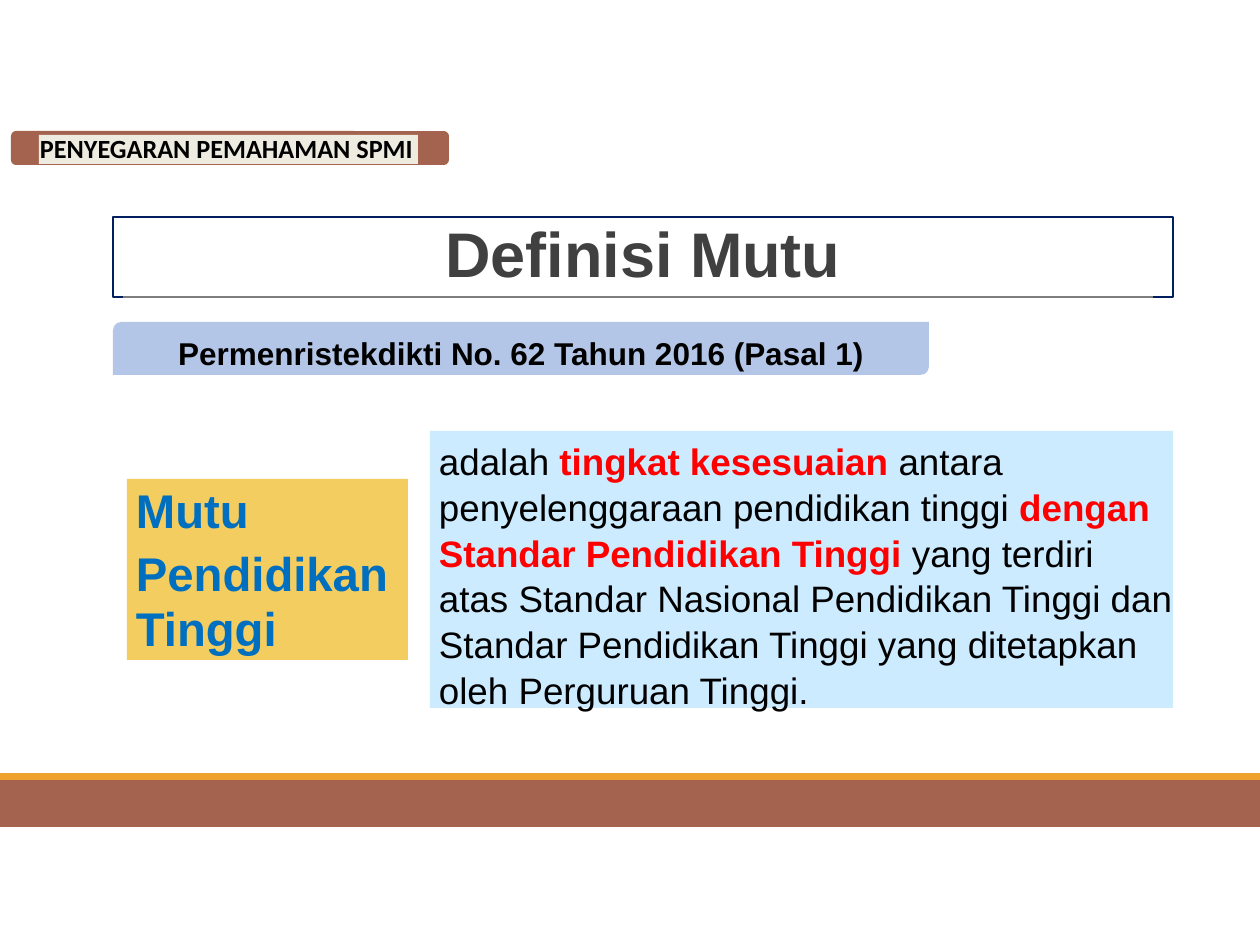
import dataclasses

import pptx
import pptx.dml.color
import pptx.enum.shapes
import pptx.enum.text
import pptx.oxml
import pptx.oxml.ns
import pptx.util

SHAPE = pptx.enum.shapes.MSO_SHAPE
ALIGN = pptx.enum.text.PP_ALIGN
WIDE, HIGH = 1260, 945
SCALE = 914400 / 126


@dataclasses.dataclass(frozen=True)
class Theme:
    brown: str = "A4634E"
    orange: str = "EFA12D"
    gray: str = "7E7E7E"
    navy: str = "001F5F"
    band: str = "B4C6E7"
    gold: str = "F3CD5F"
    sky: str = "CCEBFF"
    cream: str = "EEECE1"
    black: str = "000000"
    dark: str = "404040"
    blue: str = "006FC0"
    red: str = "FF0000"
    font: str = "Arial"
    tag_font: str = "Calibri"
    title_size: int = 36
    term_size: int = 27
    body_size: int = 21
    law_size: int = 18
    tag_size: int = 15


THEME = Theme()


def px(num):
    return pptx.util.Emu(round(num * SCALE))


def rgb(code):
    return pptx.dml.color.RGBColor.from_string(code)


def style(run, size, color, bold=True, font=THEME.font):
    run.font.name = font
    run.font.size = pptx.util.Pt(size)
    run.font.bold = bold
    run.font.color.rgb = rgb(color)


def frame(shape, left=0, top=0):
    """Prepare a top-anchored text frame with the given insets."""
    text = shape.text_frame
    text.word_wrap = True
    text.auto_size = pptx.enum.text.MSO_AUTO_SIZE.NONE
    text.vertical_anchor = pptx.enum.text.MSO_ANCHOR.TOP
    text.margin_left, text.margin_top = px(left), px(top)
    text.margin_right = text.margin_bottom = 0
    return text


def write(text, words, size, color, align=ALIGN.LEFT, space=1.0, font=THEME.font):
    text.text = words
    for para in text.paragraphs:
        para.alignment = align
        para.line_spacing = space
        for run in para.runs:
            style(run, size, color, font=font)


def block(slide, box, fill, kind=SHAPE.RECTANGLE, round_by=None):
    shape = slide.shapes.add_shape(kind, *map(px, box))
    shape.shadow.inherit = False
    shape.fill.solid()
    shape.fill.fore_color.rgb = rgb(fill)
    shape.line.fill.background()
    if round_by is not None:
        shape.adjustments[0] = round_by
    return shape


def rule(slide, left, right, y):
    line = slide.shapes.add_connector(
        pptx.enum.shapes.MSO_CONNECTOR.STRAIGHT, px(left), px(y), px(right), px(y))
    line.line.color.rgb = rgb(THEME.gray)
    line.line.width = pptx.util.Pt(0.6)
    props = line._element.spPr
    props.append(pptx.oxml.parse_xml(
        f'<a:effectLst {pptx.oxml.ns.nsdecls("a")}/>'))


def title(slide, box):
    shape = slide.shapes.title
    shape.left, shape.top, shape.width, shape.height = map(px, box)
    shape.line.color.rgb = rgb(THEME.navy)
    shape.line.width = pptx.util.Pt(0.8)
    write(frame(shape, top=3), "Definisi Mutu", THEME.title_size, THEME.dark,
          ALIGN.CENTER, 0.96)


def tag(slide):
    block(slide, (11, 131, 438, 34), THEME.brown, SHAPE.ROUNDED_RECTANGLE, 0.15)
    label = block(slide, (39, 135, 379, 29), THEME.cream)
    write(frame(label, 1, 1), "PENYEGARAN PEMAHAMAN SPMI", THEME.tag_size,
          THEME.black, space=pptx.util.Pt(15.8), font=THEME.tag_font)


def law(slide):
    shape = block(slide, (113, 322, 816, 53), THEME.band,
                  SHAPE.ROUND_2_DIAG_RECTANGLE, 0.16)
    write(frame(shape, top=10), "Permenristekdikti No. 62 Tahun 2016 (Pasal 1)",
          THEME.law_size, THEME.black, ALIGN.CENTER)


def term(slide):
    text = frame(block(slide, (127, 479, 281, 181), THEME.gold), 9, 6)
    write(text, "Mutu\nPendidikan\nTinggi", THEME.term_size, THEME.blue, space=0.96)
    text.paragraphs[1].space_before = pptx.util.Pt(5)


def meaning(slide):
    text = frame(block(slide, (430, 431, 743, 277), THEME.sky), 9, 6)
    para = text.paragraphs[0]
    para.alignment = ALIGN.LEFT
    para.line_spacing = 1.04
    parts = (
        ("adalah ", False),
        ("tingkat kesesuaian ", True),
        ("antara penyelenggaraan pendidikan tinggi ", False),
        ("dengan Standar Pendidikan Tinggi ", True),
        ("yang terdiri atas Standar Nasional Pendidikan Tinggi dan Standar "
         "Pendidikan Tinggi yang ditetapkan oleh Perguruan Tinggi.", False),
    )
    for words, strong in parts:
        run = para.add_run()
        run.text = words
        style(run, THEME.body_size, THEME.red if strong else THEME.black, strong)


def main():
    deck = pptx.Presentation()
    deck.slide_width, deck.slide_height = px(WIDE), px(HIGH)
    slide = deck.slides.add_slide(deck.slide_layouts[5])
    block(slide, (0, 780, WIDE, 47), THEME.brown)
    block(slide, (0, 773, WIDE, 7), THEME.orange)
    rule(slide, 123, 1153, 297)
    title(slide, (113, 217, 1060, 80))
    law(slide)
    term(slide)
    meaning(slide)
    tag(slide)
    deck.save("out.pptx")


if __name__ == "__main__":
    main()
